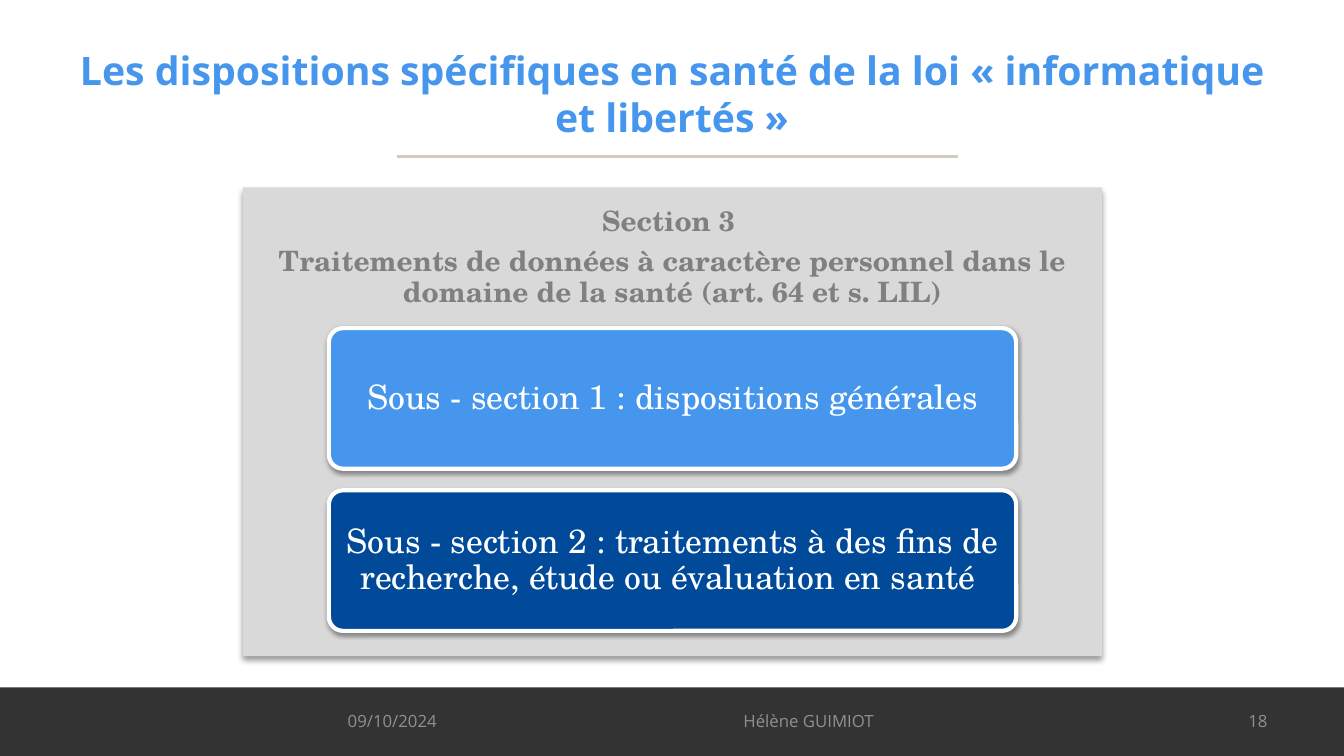
from dataclasses import dataclass

from lxml.etree import SubElement
from pptx import Presentation
from pptx.dml.color import RGBColor
from pptx.enum.shapes import MSO_CONNECTOR, MSO_SHAPE
from pptx.enum.text import MSO_ANCHOR, PP_ALIGN
from pptx.oxml.ns import qn
from pptx.util import Inches, Pt

COLORS = {
    "blue": "4596EC", "navy": "004A99", "white": "FFFFFF", "rule": "D1CCB9",
    "panel": "D9D9D9", "heading": "808080", "footer": "333333",
    "footer_text": "909090", "shadow": "000000",
}
SANS, SERIF = "Open Sans", "TeX Gyre Schola"
TITLE = {"name": SANS, "size": Pt(28), "bold": True, "color": "blue"}
HEADING = {"name": SERIF, "size": Pt(20), "bold": True, "color": "heading"}
CARD = {"name": SERIF, "size": Pt(24), "color": "white"}
FOOTER = {"name": SANS, "size": Pt(12), "color": "footer_text"}
DIAGRAM_PARAGRAPH = {"line_spacing": 0.9}


@dataclass
class Box:
    left: float
    top: float
    width: float
    height: float

    def inner(self, left, top, width, height):
        """Return an inner box given in percent of this one."""
        return Box(self.left + self.width * left / 100,
                   self.top + self.height * top / 100,
                   self.width * width / 100, self.height * height / 100)

    def lengths(self):
        return [round(value) for value in (self.left, self.top, self.width, self.height)]


def rgb(name):
    return RGBColor.from_string(COLORS[name])


def set_attributes(target, values):
    for name, value in values.items():
        setattr(target, name, value)


def add_shadow(shape, alpha, blur, distance):
    effects = shape._element.spPr.find(qn("a:effectLst"))
    shadow = SubElement(effects, qn("a:outerShdw"), blurRad=str(Pt(blur)),
                        dist=str(Pt(distance)), dir="5400000", rotWithShape="0")
    color = SubElement(shadow, qn("a:srgbClr"), val=COLORS["shadow"])
    SubElement(color, qn("a:alpha"), val=str(alpha * 1000))


def add_block(slide, box, fill, kind=MSO_SHAPE.RECTANGLE):
    shape = slide.shapes.add_shape(kind, *box.lengths())
    shape.shadow.inherit = False
    shape.fill.solid()
    shape.fill.fore_color.rgb = rgb(fill)
    shape.line.fill.background()
    return shape


def write(shape, lines, style, align=PP_ALIGN.CENTER, frame_format=None, paragraph_format=None):
    frame = shape.text_frame
    set_attributes(frame, {"word_wrap": True, "vertical_anchor": MSO_ANCHOR.MIDDLE,
                           **(frame_format or {})})
    for index, line in enumerate(lines):
        paragraph = frame.add_paragraph() if index else frame.paragraphs[0]
        set_attributes(paragraph, {"alignment": align, **(paragraph_format or {})})
        run = paragraph.add_run()
        run.text = line
        set_attributes(run.font, {key: value for key, value in style.items() if key != "color"})
        run.font.color.rgb = rgb(style["color"])


def add_title(slide, box, text):
    write(slide.shapes.add_textbox(*box.lengths()), [text], TITLE)


def add_title_rule(slide, box):
    left, top, width, _ = box.lengths()
    rule = slide.shapes.add_connector(MSO_CONNECTOR.STRAIGHT, left, top, left + width, top)
    rule.line.color.rgb = rgb("rule")
    rule.line.width = Pt(2.25)
    SubElement(rule._element.spPr, qn("a:effectLst"))


def add_card(slide, box, text, fill):
    card = add_block(slide, box, fill, MSO_SHAPE.ROUNDED_RECTANGLE)
    card.adjustments[0] = 0.1
    card.line.color.rgb = rgb("white")
    card.line.width = Pt(3)
    add_shadow(card, 38, 3.1, 1.6)
    margins = {"margin_left": Inches(0.07), "margin_right": Inches(0.07)}
    write(card, [text], CARD, frame_format=margins, paragraph_format=DIAGRAM_PARAGRAPH)


def add_section_panel(slide, box, heading, cards):
    """Fill the top 30 % with the heading and stack the cards below it."""
    panel = add_block(slide, box, "panel")
    add_shadow(panel, 40, 4, 3)
    margin = Inches(0.08)
    margins = {"margin_left": margin, "margin_right": margin, "margin_top": margin,
               "margin_bottom": round(box.height * 0.7) + margin}
    write(panel, heading, HEADING, frame_format=margins,
          paragraph_format={**DIAGRAM_PARAGRAPH, "space_after": Pt(7)})
    card_height, step = 30, 34.6
    for index, (text, fill) in enumerate(cards):
        add_card(slide, box.inner(10, 30 + index * step, 80, card_height), text, fill)


def add_footer(slide, box, entries):
    add_block(slide, box, "footer")
    for text, left, width, align in entries:
        area = box.inner(left, 19, width, 59)
        write(slide.shapes.add_textbox(*area.lengths()), [text], FOOTER, align)


def main():
    presentation = Presentation()
    set_attributes(presentation, {"slide_width": Inches(13.33), "slide_height": Inches(7.5)})
    slide = presentation.slides.add_slide(presentation.slide_layouts[6])
    page = Box(0, 0, presentation.slide_width, presentation.slide_height)

    add_footer(slide, page.inner(0, 90.93, 100, 9.07), [
        ("Hélène GUIMIOT", 44.34, 31.66, PP_ALIGN.CENTER),
        ("09/10/2024", 25.13, 23.33, PP_ALIGN.LEFT),
        ("18", 71.72, 23.33, PP_ALIGN.RIGHT),
    ])
    add_title_rule(slide, page.inner(29.56, 20.67, 41.71, 0))
    add_title(slide, page.inner(5, 4, 90, 16.67),
              "Les dispositions spécifiques en santé de la loi « informatique et libertés »")
    add_section_panel(
        slide, page.inner(18.08, 24.8, 63.92, 62),
        ["Section 3 ",
         "Traitements de données à caractère personnel dans le domaine de la santé (art. 64 et s. LIL)"],
        [("Sous - section 1 : dispositions générales", "blue"),
         ("Sous - section 2 : traitements à des fins de recherche, étude ou évaluation en santé ",
          "navy")])
    presentation.save("out.pptx")


if __name__ == "__main__":
    main()
